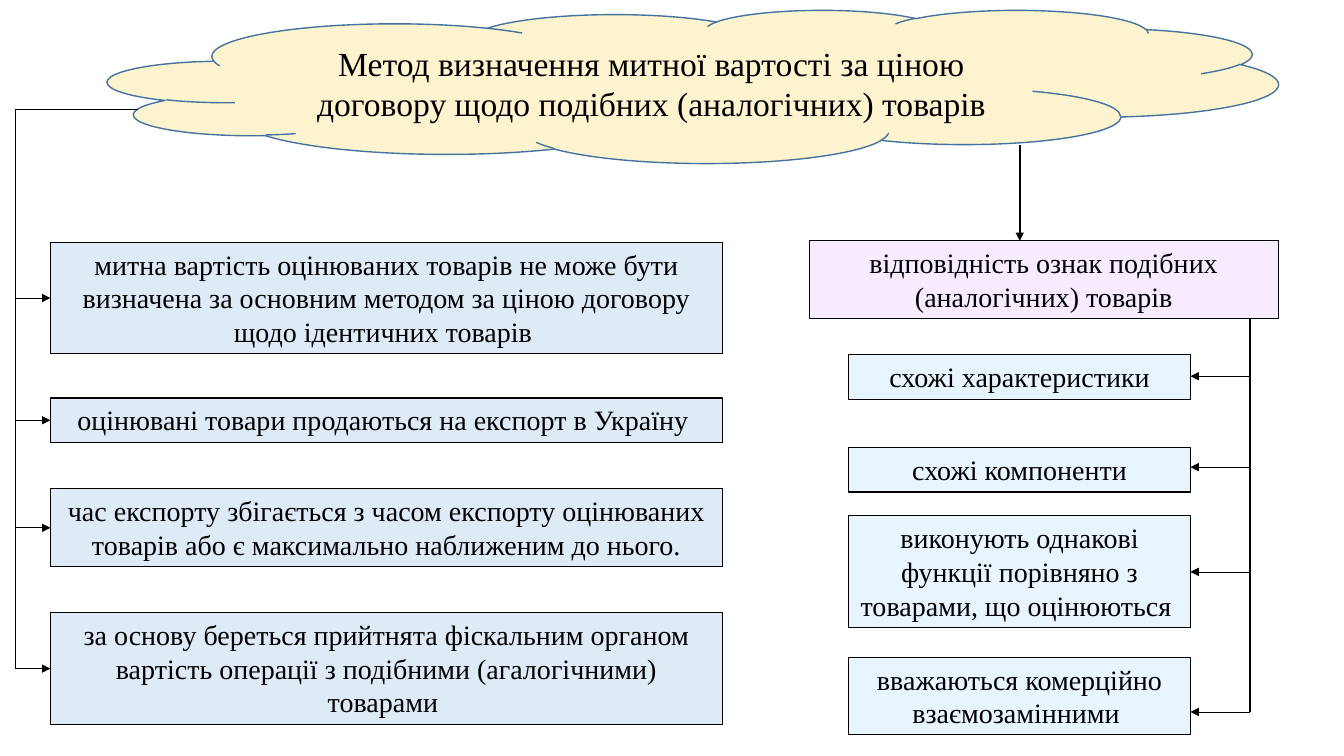
from lxml import etree
from pptx import Presentation
from pptx.dml.color import RGBColor
from pptx.enum.shapes import MSO_CONNECTOR, MSO_SHAPE
from pptx.enum.text import MSO_ANCHOR, MSO_AUTO_SIZE, PP_ALIGN
from pptx.oxml.ns import qn
from pptx.util import Cm, Pt

CLOUD = MSO_SHAPE.CLOUD
RECTANGLE = MSO_SHAPE.RECTANGLE
STRAIGHT = MSO_CONNECTOR.STRAIGHT
MIDDLE = MSO_ANCHOR.MIDDLE
TOP = MSO_ANCHOR.TOP
FIT_SHAPE = MSO_AUTO_SIZE.SHAPE_TO_FIT_TEXT
CENTER = PP_ALIGN.CENTER

BLACK = RGBColor(0x00, 0x00, 0x00)
CREAM = RGBColor(0xFD, 0xF4, 0xCF)
CLOUD_BLUE = RGBColor(0x43, 0x73, 0x9E)
CONDITION_BLUE = RGBColor(0xDE, 0xEB, 0xF7)
FEATURE_BLUE = RGBColor(0xE8, 0xF4, 0xFE)
LILAC = RGBColor(0xF6, 0xEB, 0xFF)

# Box height in cm by number of text lines
BOX_HEIGHTS = {1: 1.12, 2: 1.96, 3: 2.82}

# Top, text lines, text
CONDITIONS = [
    (6.1, 3, "митна вартість оцінюваних товарів не може бути визначена за "
             "основним методом за ціною договору щодо ідентичних товарів "),
    (10.03, 1, "оцінювані товари продаються на експорт в Україну "),
    (12.32, 2, "час експорту збігається з часом експорту оцінюваних товарів "
               "або є максимально наближеним до нього."),
    (15.44, 3, "за основу береться прийтнята фіскальним органом вартість "
               "операції з подібними (агалогічними) товарами "),
]
# Top, text lines, arrow height, text
FEATURES = [
    (8.94, 1, 9.48, "схожі характеристики"),
    (11.28, 1, 11.77, "схожі компоненти"),
    (13.0, 3, 14.41, "виконують однакові функції порівняно з товарами, що оцінюються "),
    (16.56, 2, 17.94, "вважаються комерційно взаємозамінними "),
]

CONDITION_LEFT, CONDITION_WIDTH = 1.27, 16.94
FEATURE_LEFT, FEATURE_WIDTH = 21.39, 8.61
FEATURE_RIGHT = FEATURE_LEFT + FEATURE_WIDTH
LEFT_TRUNK, RIGHT_TRUNK = 0.39, 31.5
TRUNK_TOP = 2.75
HEADING_TOP = 6.07


class Diagram:
    """Draws on one slide with a shared style; lengths are in centimetres."""

    font_name = "Times New Roman"

    def __init__(self, slide):
        self.slide = slide

    def shape(self, kind, left, top, width, height, text, fill, line, line_width, size):
        shape = self.slide.shapes.add_shape(
            kind, Cm(left), Cm(top), Cm(width), Cm(height))
        shape.shadow.inherit = False
        shape.fill.solid()
        shape.fill.fore_color.rgb = fill
        shape.line.color.rgb = line
        shape.line.width = Pt(line_width)
        text_frame = shape.text_frame
        text_frame.word_wrap = True
        text_frame.text = text
        paragraph = text_frame.paragraphs[0]
        paragraph.alignment = CENTER
        font = paragraph.runs[0].font
        font.name = self.font_name
        font.size = Pt(size)
        font.color.rgb = BLACK
        return shape

    def cloud(self, left, top, width, height, text):
        cloud = self.shape(CLOUD, left, top, width, height, text,
                           CREAM, CLOUD_BLUE, 1, 24)
        cloud.text_frame.vertical_anchor = MIDDLE

    def box(self, left, top, width, lines, text, fill):
        box = self.shape(RECTANGLE, left, top, width, BOX_HEIGHTS[lines], text,
                         fill, BLACK, 0.75, 20)
        box.text_frame.vertical_anchor = TOP
        box.text_frame.auto_size = FIT_SHAPE

    def line(self, start, end, width=0.5, arrow=False):
        connector = self.slide.shapes.add_connector(
            STRAIGHT, *(Cm(value) for value in (*start, *end)))
        connector.line.color.rgb = BLACK
        connector.line.width = Pt(width)
        if arrow:
            outline = connector.line._get_or_add_ln()
            etree.SubElement(outline, qn("a:tailEnd"), type="triangle")
        properties = connector._element.spPr
        etree.SubElement(properties, qn("a:effectLst"))


def draw_conditions(diagram):
    for top, lines, text in CONDITIONS:
        diagram.box(CONDITION_LEFT, top, CONDITION_WIDTH, lines, text, CONDITION_BLUE)
        middle = top + BOX_HEIGHTS[lines] / 2
        diagram.line((LEFT_TRUNK, middle), (CONDITION_LEFT, middle), arrow=True)
    diagram.line((LEFT_TRUNK, middle), (LEFT_TRUNK, TRUNK_TOP))
    diagram.line((3.48, TRUNK_TOP), (LEFT_TRUNK, TRUNK_TOP))


def draw_features(diagram):
    diagram.box(20.4, HEADING_TOP, 11.81, 2,
                "відповідність ознак подібних (аналогічних) товарів", LILAC)
    for top, lines, arrow_y, text in FEATURES:
        diagram.box(FEATURE_LEFT, top, FEATURE_WIDTH, lines, text, FEATURE_BLUE)
        diagram.line((RIGHT_TRUNK, arrow_y), (FEATURE_RIGHT, arrow_y), arrow=True)
    diagram.line((RIGHT_TRUNK, HEADING_TOP + BOX_HEIGHTS[2]), (RIGHT_TRUNK, arrow_y), 1.5)
    diagram.line((25.7, 3.66), (25.7, HEADING_TOP), 1.5, arrow=True)


def main():
    presentation = Presentation()
    presentation.slide_width = Cm(33.87)
    presentation.slide_height = Cm(19.05)
    slide = presentation.slides.add_slide(presentation.slide_layouts[6])
    diagram = Diagram(slide)
    diagram.cloud(2.72, 0.25, 29.49, 3.86,
                  "Метод визначення митної вартості за ціною договору "
                  "щодо подібних (аналогічних) товарів")
    draw_conditions(diagram)
    draw_features(diagram)
    presentation.save("out.pptx")


if __name__ == "__main__":
    main()
